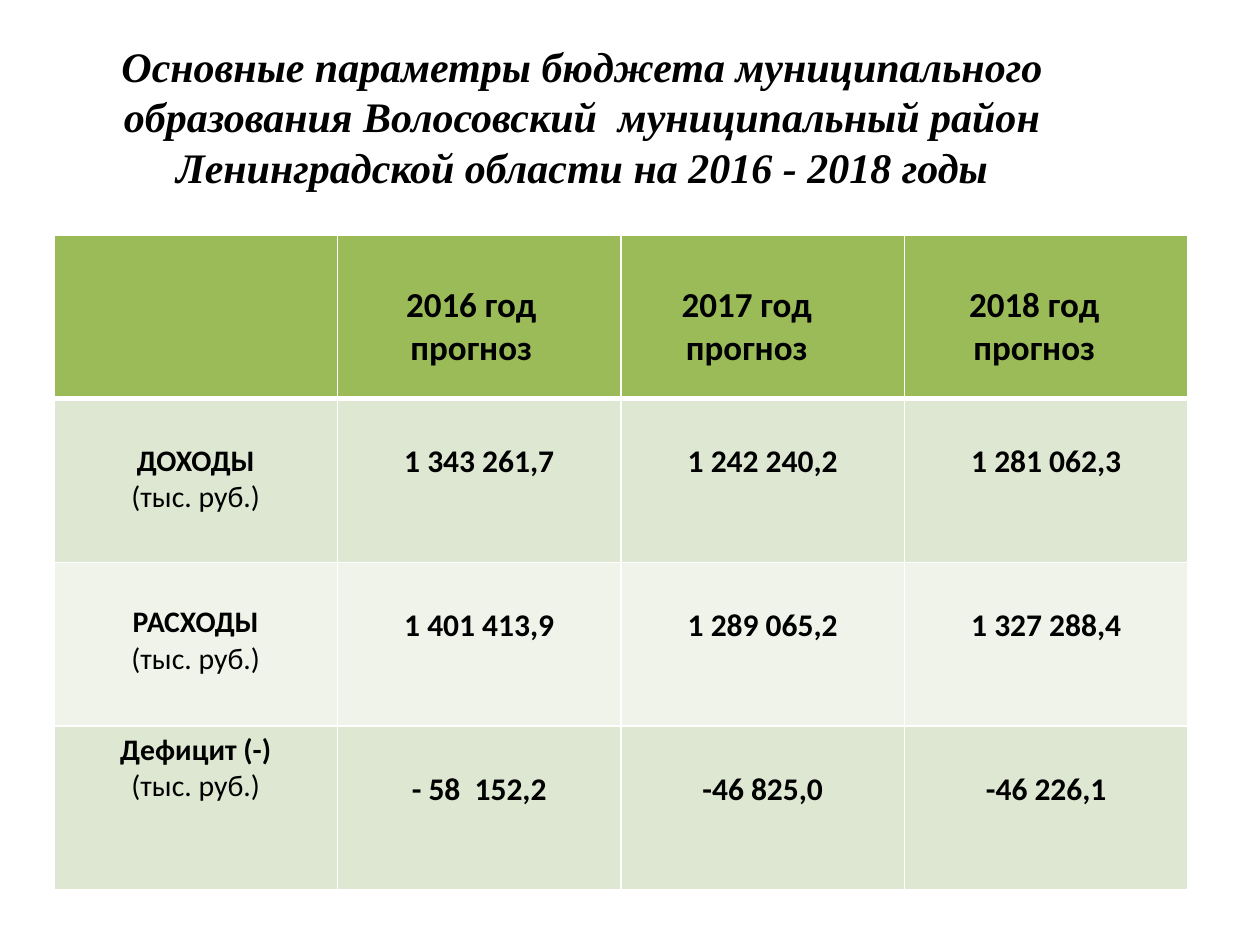
from lxml.etree import SubElement
from pptx import Presentation
from pptx.dml.color import RGBColor
from pptx.enum.text import MSO_ANCHOR as Anchor, PP_ALIGN as Align
from pptx.oxml.ns import qn
from pptx.util import Pt

EMU_PER_PX = 914400 / 126


def px(length):
    return round(length * EMU_PER_PX)


def color(hex_value):
    return RGBColor.from_string(hex_value)


class BudgetSlide:
    ink = "000000"
    rule = "FFFFFF"
    header_fill = "9BBB59"
    band_fills = ("DEE7D1", "EFF3EA")
    body_font = "Calibri"
    title_font = "Times New Roman"

    def __init__(self, deck):
        self.slide = deck.slides.add_slide(deck.slide_layouts[6])

    def line(self, paragraph, text, size, font, bold=True, italic=False, right_indent=0):
        paragraph.text = text
        paragraph.alignment = Align.CENTER
        paragraph.font.size = Pt(size)
        paragraph.font.name = font
        paragraph.font.bold = bold
        paragraph.font.italic = italic
        paragraph.font.color.rgb = color(self.ink)
        if right_indent:
            paragraph._p.get_or_add_pPr().set("marR", str(px(right_indent)))

    def title(self, text, left, top, width, height):
        frame = self.slide.shapes.add_textbox(px(left), px(top), px(width), px(height)).text_frame
        frame.word_wrap = True
        frame.vertical_anchor = Anchor.MIDDLE
        self.line(frame.paragraphs[0], text, 24, self.title_font, italic=True)

    def table(self, rows, columns, left, top, width, height):
        table = self.slide.shapes.add_table(
            rows, columns, px(left), px(top), px(width), px(height)).table
        table.horz_banding = False
        table.first_row = True
        return table

    def borders(self, cell, top=1, bottom=1):
        properties = cell._tc.get_or_add_tcPr()
        for side, points in (("L", 1), ("R", 1), ("T", top), ("B", bottom)):
            edge = SubElement(properties, qn(f"a:ln{side}"), w=str(Pt(points)))
            fill = SubElement(edge, qn("a:solidFill"))
            SubElement(fill, qn("a:srgbClr"), val=self.rule)

    def cell(self, cell, lines, fill, margin_top, top=1, bottom=1):
        self.borders(cell, top, bottom)
        cell.fill.solid()
        cell.fill.fore_color.rgb = color(fill)
        cell.margin_top = px(margin_top)
        frame = cell.text_frame
        for index, (text, size, bold, right_indent) in enumerate(lines):
            paragraph = frame.add_paragraph() if index else frame.paragraphs[0]
            self.line(paragraph, text, size, self.body_font, bold, right_indent=right_indent)

    def budget(self, years, indicators, left, top, width, height):
        table = self.table(len(indicators) + 1, len(years) + 1, left, top, width, height)
        self.cell(table.cell(0, 0), [], self.header_fill, 6, bottom=3)
        for column, (year, right_indent) in enumerate(years, 1):
            heading = [(f"{year} год", 20, True, right_indent), ("прогноз", 20, True, 0)]
            self.cell(table.cell(0, column), heading, self.header_fill, 49, bottom=3)
        for row, (name, label_top, amounts) in enumerate(indicators, 1):
            fill = self.band_fills[(row - 1) % 2]
            top_rule = 3 if row == 1 else 1
            label = [(name, 17, True, 0), ("(тыс. руб.)", 17, False, 0)]
            self.cell(table.cell(row, 0), label, fill, label_top, top=top_rule)
            for column, amount in enumerate(amounts, 1):
                self.cell(table.cell(row, column), [(amount, 18, True, 0)], fill, 44, top=top_rule)


def main():
    deck = Presentation()
    deck.slide_width, deck.slide_height = px(1260), px(945)
    page = BudgetSlide(deck)
    page.budget(
        years=[(2016, 16), (2017, 32), (2018, 24)],
        indicators=[
            ("ДОХОДЫ", 44, ("1 343 261,7", "1 242 240,2", "1 281 062,3")),
            ("РАСХОДЫ", 42, ("1 401 413,9", "1 289 065,2", "1 327 288,4")),
            ("Дефицит (-)", 6, ("- 58  152,2", "-46 825,0", "-46 226,1")),
        ],
        left=54, top=235, width=1134, height=655)
    page.title(
        "Основные параметры бюджета муниципального образования Волосовский  "
        "муниципальный район Ленинградской области на 2016 - 2018 годы",
        left=15, top=37, width=1134, height=158)
    deck.save("out.pptx")


if __name__ == "__main__":
    main()
